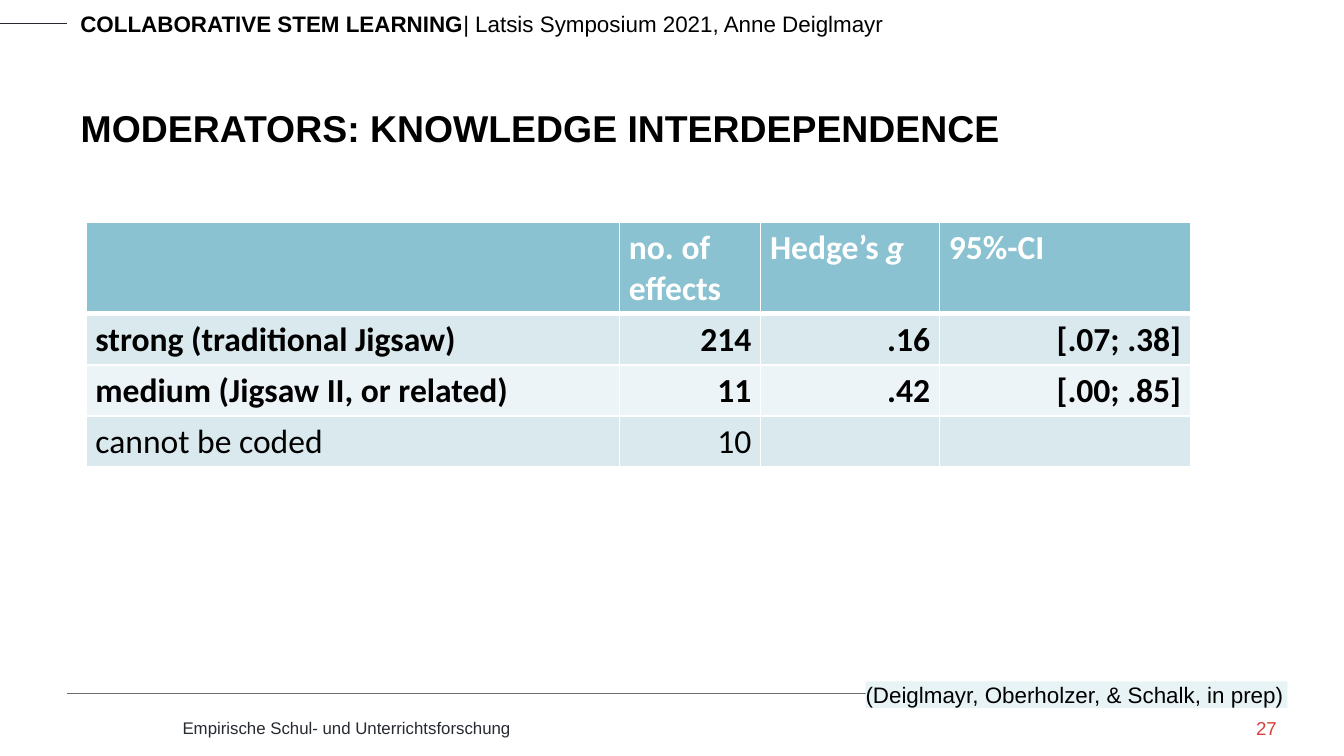
from pptx import Presentation
from pptx.dml.color import RGBColor
from pptx.enum.shapes import MSO_CONNECTOR as Connector, MSO_SHAPE as Shape
from pptx.enum.text import MSO_ANCHOR as Anchor, MSO_AUTO_SIZE as AutoSize, PP_ALIGN as Align
from pptx.oxml.ns import qn
from pptx.util import Inches, Pt
from lxml.etree import SubElement

BLACK = RGBColor(0x00, 0x00, 0x00)
WHITE = RGBColor(0xFF, 0xFF, 0xFF)
SLATE = RGBColor(0x26, 0x2A, 0x31)
GREY = RGBColor(0x66, 0x6C, 0x70)
RED = RGBColor(0xD8, 0x41, 0x3E)
TEAL = RGBColor(0x8A, 0xC2, 0xD1)
BAND_DARK = RGBColor(0xDA, 0xE9, 0xEE)
BAND_LIGHT = RGBColor(0xED, 0xF4, 0xF7)
NOTE_FILL = RGBColor(0xE8, 0xF3, 0xF6)

# Grid of a 16:9 slide: 100 columns by 56.25 rows
COLUMNS, ROWS = 100, 56.25


def write(paragraph, text, font="Arial", size=12, color=BLACK, bold=False,
          italic=False, align=Align.LEFT):
    """Add a formatted run to a paragraph."""
    paragraph.alignment = align
    run = paragraph.add_run()
    run.text = text
    run.font.name, run.font.size = font, Pt(size)
    run.font.bold, run.font.italic = bold, italic
    run.font.color.rgb = color


class SlideBuilder:
    def __init__(self, deck):
        self.column = deck.slide_width / COLUMNS
        self.row = deck.slide_height / ROWS
        self.slide = deck.slides.add_slide(deck.slide_layouts[5])

    def place(self, left, top, width, height):
        return (round(left * self.column), round(top * self.row),
                round(width * self.column), round(height * self.row))

    def title(self, text, *box, **style):
        heading = self.slide.shapes.title
        heading.left, heading.top, heading.width, heading.height = self.place(*box)
        frame = heading.text_frame
        frame.vertical_anchor, frame.auto_size = Anchor.BOTTOM, AutoSize.NONE
        write(frame.paragraphs[0], text, **style)

    def text(self, runs, *box, inset=None):
        frame = self.slide.shapes.add_textbox(*self.place(*box)).text_frame
        frame.word_wrap = True
        if inset is not None:
            self.set_insets(frame, inset)
        for words, style in runs:
            write(frame.paragraphs[0], words, **style)

    def set_insets(self, frame, inset):
        frame.margin_left = frame.margin_right = Inches(inset)
        frame.margin_top = frame.margin_bottom = Inches(inset)

    def rule(self, left, right, top, color):
        x1, y, length, _ = self.place(left, top, right - left, 0)
        line = self.slide.shapes.add_connector(Connector.STRAIGHT, x1, y, x1 + length, y)
        line.line.color.rgb, line.line.width = color, Pt(0.25)
        SubElement(line._element.spPr, qn("a:effectLst"))

    def label(self, text, *box, fill, **style):
        panel = self.slide.shapes.add_shape(Shape.RECTANGLE, *self.place(*box))
        panel.shadow.inherit = False
        panel.fill.solid()
        panel.fill.fore_color.rgb = fill
        panel.line.fill.background()
        frame = panel.text_frame
        frame.word_wrap, frame.vertical_anchor = False, Anchor.TOP
        self.set_insets(frame, 0)
        write(frame.paragraphs[0], text, **style)

    def border(self, cell, side, width):
        line = SubElement(cell._tc.get_or_add_tcPr(), qn(f"a:ln{side}"), w=str(Pt(width)))
        fill = SubElement(line, qn("a:solidFill"))
        SubElement(fill, qn("a:srgbClr"), val=str(WHITE))

    def cell(self, cell, runs, fill, widths, **style):
        for side in "LRTB":
            self.border(cell, side, widths.get(side, 1))
        cell.fill.solid()
        cell.fill.fore_color.rgb = fill
        cell.margin_left = cell.margin_right = Inches(0.07)
        cell.margin_top = cell.margin_bottom = Inches(0.04)
        for words, extra in runs:
            write(cell.text_frame.paragraphs[0], words, font="Calibri", size=18,
                  **style, **extra)

    def table(self, header, body, left, top, widths, heights):
        box = self.place(left, top, sum(widths), sum(heights))
        table = self.slide.shapes.add_table(len(heights), len(widths), *box).table
        for column, width in zip(table.columns, widths):
            column.width = round(width * self.column)
        for row, height in zip(table.rows, heights):
            row.height = round(height * self.row)
        for c, runs in enumerate(header):
            self.cell(table.cell(0, c), runs, TEAL, {"B": 3}, color=WHITE, bold=True)
        for r, (bold, *values) in enumerate(body, 1):
            for c, value in enumerate(values):
                self.cell(table.cell(r, c), [(value, {})] if value else [],
                          BAND_DARK if r % 2 else BAND_LIGHT,
                          {"T": 3} if r == 1 else {}, bold=bold,
                          align=Align.RIGHT if c else Align.LEFT)


def main():
    deck = Presentation()
    deck.slide_width = Inches(10)
    deck.slide_height = deck.slide_width * 9 // 16
    page = SlideBuilder(deck)

    # Header and title
    page.rule(0, 5, 1.7, SLATE)
    page.text([("COLLABORATIVE STEM LEARNING", {"bold": True}),
               ("| Latsis Symposium 2021, Anne Deiglmayr", {})], 5, 0.25, 76.6, 3)
    page.title("MODERATORS: KNOWLEDGE INTERDEPENDENCE", 5, 3.35, 90.1, 8.3,
               size=20, bold=True)

    # Footer
    page.rule(5, 95, 51.55, GREY)
    page.text([("Empirische Schul- und Unterrichtsforschung",
                {"size": 9, "color": SLATE})], 12.6, 52.9, 74.2, 2.5)
    page.text([("27", {"size": 10, "color": RED, "align": Align.RIGHT})],
              86.9, 53.35, 8.1, 2.2, inset=0)

    # Effects by strength of interdependence
    header = [[], [("no. of effects", {})],
              [("Hedge’s ", {}), ("g", {"italic": True})], [("95%-CI", {})]]
    body = [(True, "strong (traditional Jigsaw)", "214", ".16", "[.07; .38]"),
            (True, "medium (Jigsaw II, or related)", "11", ".42", "[.00; .85]"),
            (False, "cannot be coded", "10", "", "")]
    page.table(header, body, 6.4, 16.55, widths=[39.7, 10.5, 13.3, 18.7],
               heights=[6.8] + [3.75] * len(body))

    # Reference
    page.label("(Deiglmayr, Oberholzer, & Schalk, in prep)", 64.4, 50.7, 31.4, 2,
               fill=NOTE_FILL)

    deck.save("out.pptx")


if __name__ == "__main__":
    main()
